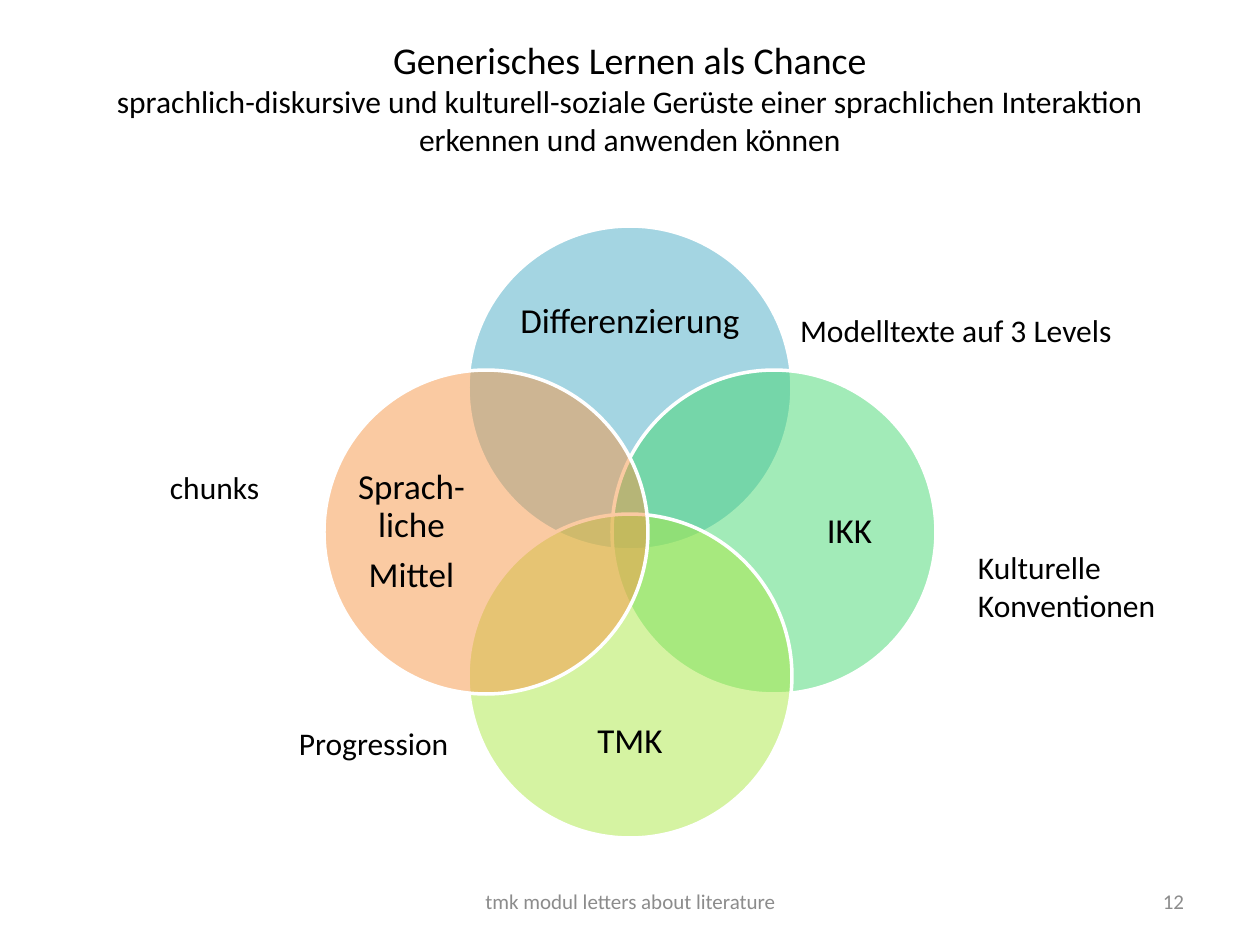
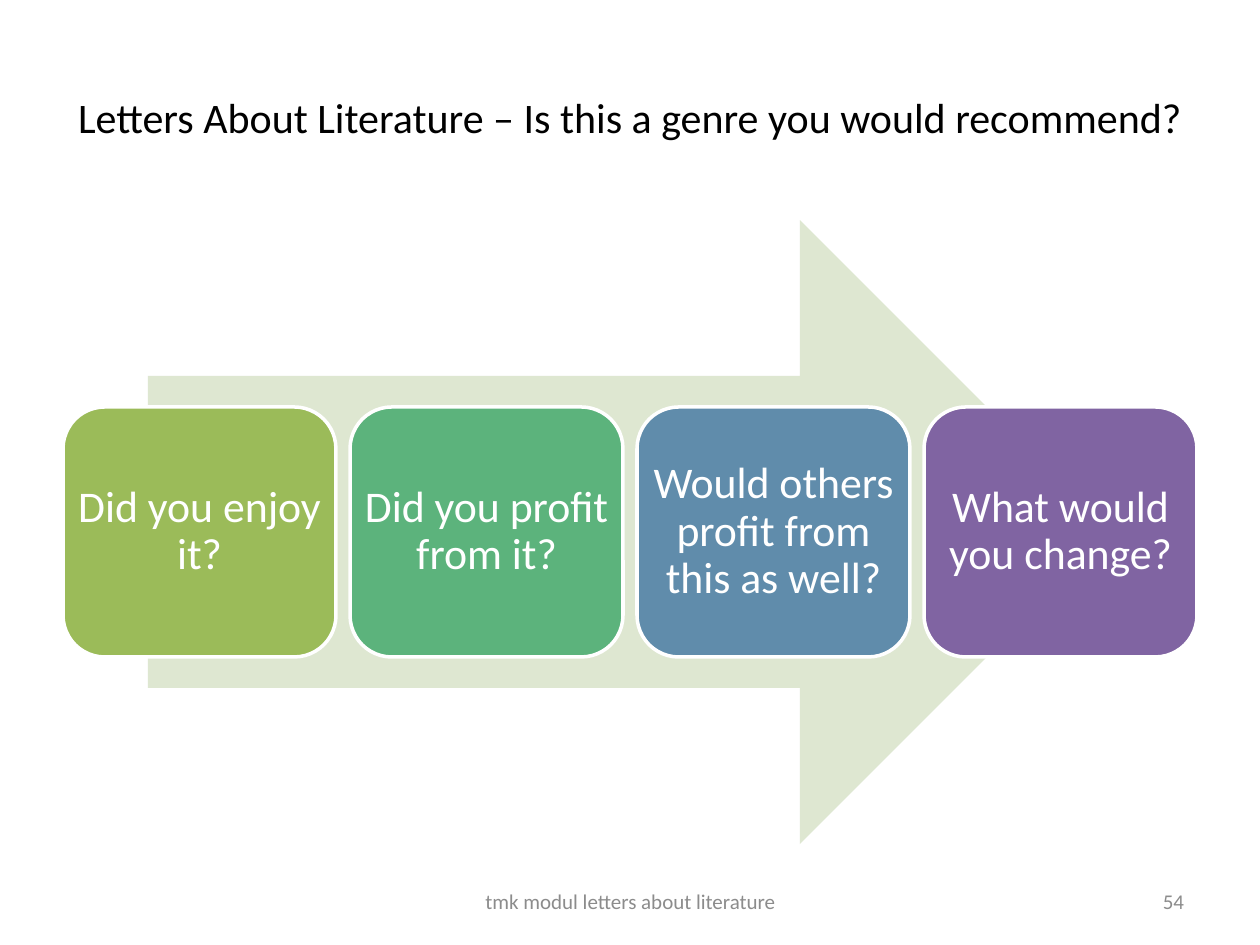
from dataclasses import dataclass

from lxml import etree
from pptx import Presentation
from pptx.dml.color import RGBColor
from pptx.enum.shapes import MSO_SHAPE
from pptx.enum.text import MSO_ANCHOR, PP_ALIGN
from pptx.oxml.ns import qn
from pptx.shapes.autoshape import Shape
from pptx.slide import Slide
from pptx.util import Pt

OVAL = MSO_SHAPE.OVAL
ROUNDED = MSO_SHAPE.ROUNDED_RECTANGLE
ARROW = MSO_SHAPE.RIGHT_ARROW
LEFT, CENTER, RIGHT = PP_ALIGN.LEFT, PP_ALIGN.CENTER, PP_ALIGN.RIGHT
TOP, MIDDLE = MSO_ANCHOR.TOP, MSO_ANCHOR.MIDDLE

# Scale and page, in px
PX = 914400 / 126
PAGE_W, PAGE_H, MARGIN = 1260, 945, 63
CENTER_X, CENTER_Y = PAGE_W // 2, 532
INSET_X, INSET_Y = 13, 6
FOOTER = "tmk modul letters about literature"


@dataclass(frozen=True)
class Theme:
    font: str = "Calibri"
    ink: str = "000000"
    white: str = "FFFFFF"
    muted: str = "8C8C8C"
    blue: str = "4BACC6"
    mint: str = "47D872"
    lime: str = "ACE946"
    orange: str = "F79646"
    arrow: str = "DEE7D1"
    card_colors: tuple[str, ...] = ("9BBB59", "5CB37C", "608CAB", "8064A2")
    title: float = 24
    title_lead: float = 21.6
    body: float = 18
    venn: float = 20
    card: float = 25
    footer: float = 12
    outline: float = 2
    line_spacing: float = 0.9
    space_after: float = 0.35


THEME = Theme()


@dataclass(frozen=True)
class Box:
    x: int
    y: int
    w: int
    h: int


@dataclass(frozen=True)
class Circle:
    label: str
    color: str
    dx: int
    dy: int


@dataclass(frozen=True)
class Callout:
    text: str
    box: Box


# Shared helpers
def emu(px: float) -> int:
    return round(px * PX)


def place(box: Box) -> tuple[int, int, int, int]:
    return emu(box.x), emu(box.y), emu(box.w), emu(box.h)


def centered(cx: int, cy: int, w: int, h: int) -> Box:
    return Box(cx - w // 2, cy - h // 2, w, h)


def write(s: Shape, text: str, size: float, color: str = THEME.ink, align: PP_ALIGN = CENTER,
          anchor: MSO_ANCHOR = MIDDLE, inset: tuple[int, int] = (INSET_X, INSET_Y),
          diagram: bool = False) -> None:
    tf = s.text_frame
    tf.text = text
    tf.word_wrap = True
    tf.vertical_anchor = anchor
    tf.margin_left = tf.margin_right = emu(inset[0])
    tf.margin_top = tf.margin_bottom = emu(inset[1])
    for p in tf.paragraphs:
        p.alignment = align
        if diagram:
            p.line_spacing = THEME.line_spacing
            p.space_after = Pt(size * THEME.space_after)
        for r in p.runs:
            r.font.name = THEME.font
            r.font.size = Pt(size)
            r.font.color.rgb = RGBColor.from_string(color)


def add_text(slide: Slide, box: Box, text: str, size: float, **style) -> Shape:
    s = slide.shapes.add_textbox(*place(box))
    write(s, text, size, **style)
    return s


def add_figure(slide: Slide, kind: MSO_SHAPE, box: Box, color: str,
               outlined: bool = True, alpha: int = 100) -> Shape:
    s = slide.shapes.add_shape(kind, *place(box))
    s.shadow.inherit = False
    s.fill.solid()
    s.fill.fore_color.rgb = RGBColor.from_string(color)
    if alpha < 100:
        rgb = s.fill._xPr.find(qn("a:solidFill")).find(qn("a:srgbClr"))
        etree.SubElement(rgb, qn("a:alpha")).set("val", str(alpha * 1000))
    if outlined:
        s.line.color.rgb = RGBColor.from_string(THEME.white)
        s.line.width = Pt(THEME.outline)
    else:
        s.line.fill.background()
    return s


def add_page(prs: Presentation, title: str, size: float, number: int) -> tuple[Slide, Shape]:
    """Add a blank slide with its title, footer and page number."""
    slide = prs.slides.add_slide(prs.slide_layouts[6])
    heading = add_text(slide, Box(MARGIN, 38, PAGE_W - 2 * MARGIN, 157), title, size)
    add_text(slide, Box(431, 876, 399, 50), FOOTER, THEME.footer, color=THEME.muted)
    add_text(slide, Box(903, 876, 294, 50), str(number), THEME.footer,
             color=THEME.muted, align=RIGHT)
    return slide, heading


# Slide 1: four overlapping circles
DIAMETER, REACH = 324, 144
LABEL_LONG, LABEL_WIDE, LABEL_HIGH = 250, 125, 103
LABEL_REACH_X, LABEL_REACH_Y = 219, 210
CIRCLES = (
    Circle("Differenzierung", THEME.blue, 0, -1),
    Circle("IKK", THEME.mint, 1, 0),
    Circle("TMK", THEME.lime, 0, 1),
    Circle("Sprach-liche\nMittel", THEME.orange, -1, 0),
)
CALLOUTS = (
    Callout("Progression", Box(286, 718, 186, 50)),
    Callout("chunks", Box(157, 462, 137, 50)),
    Callout("Kulturelle\vKonventionen", Box(965, 542, 210, 89)),
    Callout("Modelltexte auf 3 Levels", Box(787, 305, 345, 50)),
)


def add_circle(slide: Slide, circle: Circle) -> None:
    outline = centered(CENTER_X + circle.dx * REACH, CENTER_Y + circle.dy * REACH,
                       DIAMETER, DIAMETER)
    add_figure(slide, OVAL, outline, circle.color, alpha=50)
    w, h = (LABEL_WIDE, LABEL_LONG) if circle.dx else (LABEL_LONG, LABEL_HIGH)
    label = centered(CENTER_X + circle.dx * LABEL_REACH_X,
                     CENTER_Y + circle.dy * LABEL_REACH_Y, w, h)
    add_text(slide, label, circle.label, THEME.venn, inset=(0, 0), diagram=True)


def build_venn(prs: Presentation) -> None:
    title = ("Generisches Lernen als Chance\vsprachlich-diskursive und kulturell-soziale "
             "Gerüste einer sprachlichen Interaktion erkennen und anwenden können")
    slide, heading = add_page(prs, title, THEME.body, 12)
    tf = heading.text_frame
    tf.margin_bottom = emu(44)
    tf.paragraphs[0].runs[0].font.size = Pt(THEME.title_lead)
    for circle in CIRCLES:
        add_circle(slide, circle)
    for callout in CALLOUTS:
        add_text(slide, callout.box, callout.text, THEME.body, align=LEFT, anchor=TOP)


# Slide 2: question cards on an arrow
QUESTIONS = (
    "Did you enjoy it?",
    "Did you profit from it?",
    "Would others profit from this as well?",
    "What would you change?",
)
CARD_W, CARD_H, CARD_GAP = 273, 250, 14


def build_questions(prs: Presentation) -> None:
    title = "Letters About Literature – Is this a genre you would recommend?"
    slide, _ = add_page(prs, title, THEME.title, 54)
    add_figure(slide, ARROW, centered(CENTER_X, CENTER_Y, 964, 624), THEME.arrow,
               outlined=False)
    for i, (question, color) in enumerate(zip(QUESTIONS, THEME.card_colors)):
        box = Box(MARGIN + i * (CARD_W + CARD_GAP), CENTER_Y - CARD_H // 2, CARD_W, CARD_H)
        card = add_figure(slide, ROUNDED, box, color)
        write(card, question, THEME.card, color=THEME.white, inset=(0, 0), diagram=True)


def main() -> None:
    prs = Presentation()
    prs.slide_width, prs.slide_height = emu(PAGE_W), emu(PAGE_H)
    build_venn(prs)
    build_questions(prs)
    prs.save("out.pptx")


if __name__ == "__main__":
    main()
